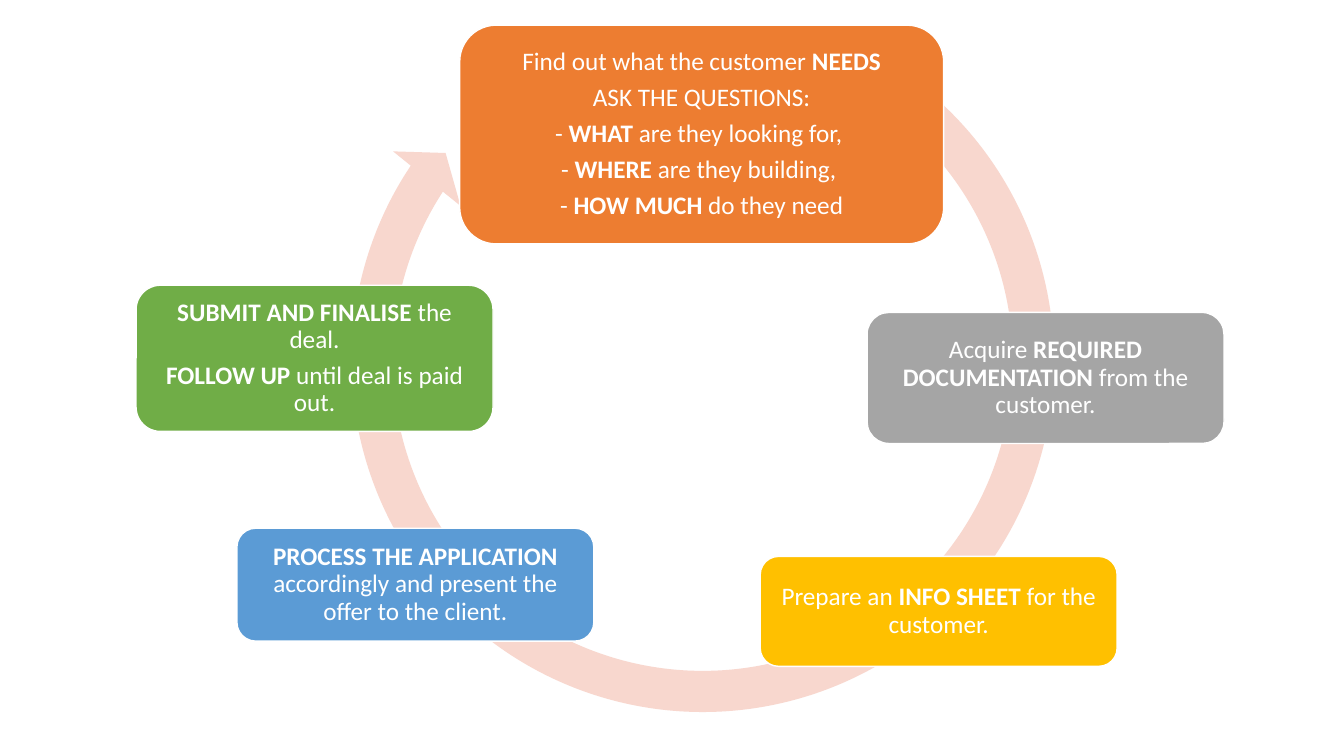
from pptx import Presentation
from pptx.dml.color import RGBColor
from pptx.enum.shapes import MSO_SHAPE
from pptx.enum.text import MSO_ANCHOR, PP_ALIGN
from pptx.util import Inches, Pt

ARROW = MSO_SHAPE.CIRCULAR_ARROW
ROUNDED = MSO_SHAPE.ROUNDED_RECTANGLE
MIDDLE = MSO_ANCHOR.MIDDLE
CENTER = PP_ALIGN.CENTER

WHITE = RGBColor(0xFF, 0xFF, 0xFF)
PINK = RGBColor(0xF8, 0xD7, 0xCE)
ORANGE = RGBColor(0xED, 0x7D, 0x31)
GREY = RGBColor(0xA5, 0xA5, 0xA5)
GOLD = RGBColor(0xFF, 0xC0, 0x00)
BLUE = RGBColor(0x5B, 0x9B, 0xD5)
GREEN = RGBColor(0x70, 0xAD, 0x47)

FONT = "Calibri"
FONT_SIZE = 18
INSET = Inches(0.07)

# Steps clockwise: (left, top, width, height), fill, paragraphs of (text, bold) runs
STEPS = [
    ((4.56, 0.25, 4.8, 2.17), ORANGE, [
        [("Find out what the customer ", False), ("NEEDS", True)],
        [("ASK THE QUESTIONS:", False)],
        [("- ", False), ("WHAT ", True), ("are they looking for, ", False)],
        [("- ", False), ("WHERE ", True), ("are they building, ", False)],
        [("- ", False), ("HOW MUCH ", True), ("do they need", False)],
    ]),
    ((8.6, 3.1, 3.54, 1.3), GREY, [
        [("Acquire ", False), ("REQUIRED DOCUMENTATION ", True),
         ("from the customer.", False)],
    ]),
    ((7.54, 5.52, 3.54, 1.09), GOLD, [
        [("Prepare an ", False), ("INFO SHEET ", True),
         ("for the customer.", False)],
    ]),
    ((2.35, 5.24, 3.54, 1.12), BLUE, [
        [("PROCESS THE APPLICATION ", True),
         ("accordingly and present the offer to the client.", False)],
    ]),
    ((1.35, 2.83, 3.54, 1.45), GREEN, [
        [("SUBMIT AND FINALISE ", True), ("the deal.", False)],
        [("FOLLOW UP ", True), ("until deal is paid out.", False)],
    ]),
]

# Cycle arrow: band width, head angle, end angle, start angle, head width
ARROW_BOX = (3.26, -0.13, 7.42, 7.42)
ARROW_ADJUSTMENTS = (0.055, 3.307, 128.068, 180.083, 0.058)


def add_filled_shape(slide, preset, box, color):
    shape = slide.shapes.add_shape(preset, *map(Inches, box))
    shape.shadow.inherit = False
    shape.fill.solid()
    shape.fill.fore_color.rgb = color
    return shape


def add_cycle_arrow(slide):
    arrow = add_filled_shape(slide, ARROW, ARROW_BOX, PINK)
    arrow.line.fill.background()
    for index, value in enumerate(ARROW_ADJUSTMENTS):
        arrow.adjustments[index] = value


def add_step(slide, box, color, paragraphs):
    shape = add_filled_shape(slide, ROUNDED, box, color)
    shape.line.color.rgb = WHITE
    shape.line.width = Pt(1)
    frame = shape.text_frame
    frame.word_wrap = True
    frame.vertical_anchor = MIDDLE
    frame.margin_left = frame.margin_right = INSET
    frame.margin_top = frame.margin_bottom = INSET
    for index, runs in enumerate(paragraphs):
        paragraph = frame.add_paragraph() if index else frame.paragraphs[0]
        paragraph.alignment = CENTER
        paragraph.line_spacing = 0.9
        paragraph.space_after = Pt(0.35 * FONT_SIZE)
        for text, bold in runs:
            run = paragraph.add_run()
            run.text = text
            run.font.name = FONT
            run.font.size = Pt(FONT_SIZE)
            run.font.bold = bold
            run.font.color.rgb = WHITE


def main():
    presentation = Presentation()
    presentation.slide_width = Inches(13.33)
    presentation.slide_height = Inches(7.5)
    blank_layout = presentation.slide_layouts[6]
    slide = presentation.slides.add_slide(blank_layout)

    # The arrow lies behind the steps
    add_cycle_arrow(slide)
    for box, color, paragraphs in STEPS:
        add_step(slide, box, color, paragraphs)

    presentation.save("out.pptx")


if __name__ == "__main__":
    main()
